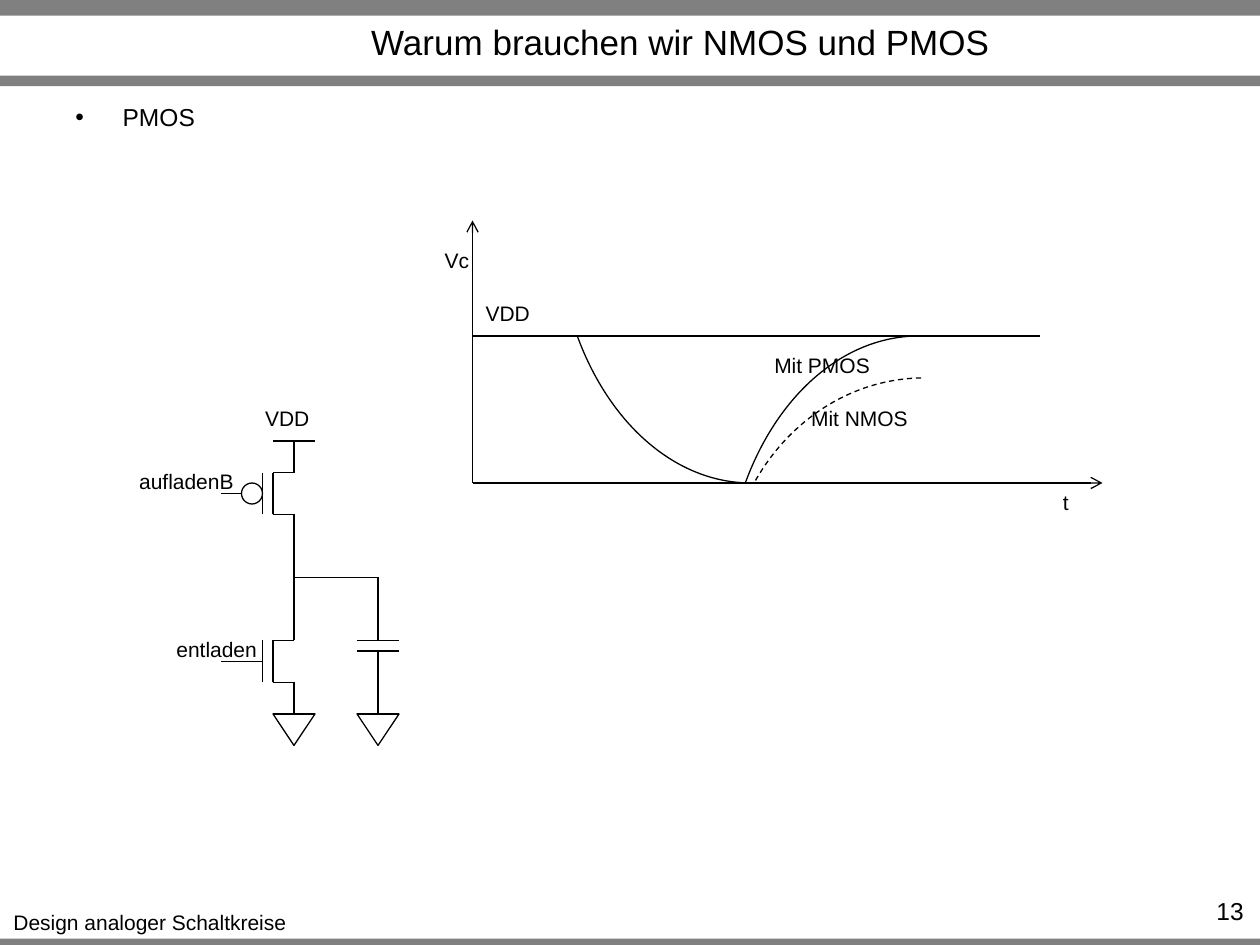
from lxml import etree
from pptx import Presentation
from pptx import util as u
from pptx.dml.color import RGBColor
from pptx.enum import dml, shapes, text
from pptx.oxml import ns

BLACK = RGBColor(0x00, 0x00, 0x00)
WHITE = RGBColor(0xFF, 0xFF, 0xFF)
GREY = RGBColor(0x80, 0x80, 0x80)
FONT = "Arial"
STROKE = 0.75
MIDDLE = text.PP_ALIGN.CENTER


def add_bar(slide, top, height):
    """Draw a grey band across the slide."""
    bar = slide.shapes.add_shape(
        shapes.MSO_SHAPE.RECTANGLE, 0, u.Pt(top), u.Pt(720), u.Pt(height))
    bar.shadow.inherit = False
    bar.fill.solid()
    bar.fill.fore_color.rgb = GREY
    bar.line.fill.background()


def add_text(slide, words, box, size=12, align=MIDDLE, wrap=False, bullet=False):
    """Write one paragraph into a text box."""
    frame = slide.shapes.add_textbox(*map(u.Pt, box)).text_frame
    frame.word_wrap = wrap
    paragraph = frame.paragraphs[0]
    if bullet:
        props = paragraph._p.get_or_add_pPr()
        props.set("marL", str(u.Pt(27)))
        props.set("indent", str(u.Pt(-27)))
        etree.SubElement(props, ns.qn("a:buFont")).set("typeface", FONT)
        etree.SubElement(props, ns.qn("a:buChar")).set("char", "•")
    paragraph.alignment = align
    run = paragraph.add_run()
    run.text = words
    run.font.size = u.Pt(size)
    run.font.name = FONT
    run.font.color.rgb = BLACK
    return frame


def add_line(parent, start, end, arrow=False):
    """Draw a thin straight line, optionally ending in an arrowhead."""
    line = parent.shapes.add_connector(
        shapes.MSO_CONNECTOR.STRAIGHT, *map(u.Pt, (*start, *end)))
    line.line.color.rgb = BLACK
    line.line.width = u.Pt(STROKE)
    if arrow:
        etree.SubElement(line.line._get_or_add_ln(), ns.qn("a:tailEnd")).set("type", "arrow")
    etree.SubElement(line._element.spPr, ns.qn("a:effectLst"))


def add_outline(slide, kind, box, flips=()):
    """Draw an unfilled preset outline, flipped where asked."""
    outline = slide.shapes.add_shape(kind, *map(u.Pt, box))
    outline.shadow.inherit = False
    outline.fill.background()
    outline.line.color.rgb = BLACK
    outline.line.width = u.Pt(STROKE)
    for flip in flips:
        outline._element.spPr.xfrm.set(flip, "1")
    return outline


def add_curve(slide, box, rotation, flips, dashed=False):
    """Draw a charging or discharging curve as an arc."""
    curve = add_outline(slide, shapes.MSO_SHAPE.ARC, box, flips)
    curve.rotation = rotation
    curve.adjustments[0] = 182.995
    curve.adjustments[1] = 0
    if dashed:
        curve.line.dash_style = dml.MSO_LINE.DASH


def add_transistor(slide, x, y):
    """Draw a transistor with its channel terminals at x and its gate at y."""
    transistor = slide.shapes.add_group_shape()
    channel, gate = x - 12, x - 18
    top, bottom = y - 12, y + 12
    for start, end in (
        ((x, bottom), (channel, bottom)),
        ((channel, bottom), (channel, top)),
        ((x, top), (channel, top)),
        ((gate, bottom), (gate, top)),
        ((x - 30, y), (gate, y)),
        ((x - 30, y), (x - 42, y)),
        ((x, top), (x, y - 30)),
        ((x, y + 30), (x, bottom)),
    ):
        add_line(transistor, start, end)


def add_circuit(slide):
    """Draw the inverter stage with its load capacitor."""
    stage, load = 168, 216
    pmos_gate, nmos_gate = 282, 378
    output, ground = 330, 408
    add_transistor(slide, stage, nmos_gate)
    add_transistor(slide, stage, pmos_gate)
    add_line(slide, (stage, 312), (stage, 348))
    add_line(slide, (stage, output), (load, output))
    add_line(slide, (load, output), (load, 366))
    add_line(slide, (load, 372), (load, ground))
    for x, y in ((stage, 252), (load, 366), (load, 372), (stage, ground), (load, ground)):
        add_line(slide, (x - 12, y), (x + 12, y))
    for x in (stage, load):
        add_outline(slide, shapes.MSO_SHAPE.ISOSCELES_TRIANGLE,
                    (x - 12, ground, 24, 18), ("flipV",))
    inversion = add_outline(slide, shapes.MSO_SHAPE.OVAL, (138, pmos_gate - 6, 12, 12))
    inversion.fill.solid()
    inversion.fill.fore_color.rgb = WHITE


def add_diagram(slide):
    """Draw the capacitor voltage over time."""
    origin, supply = (270, 276), 192
    add_line(slide, origin, (630, 276), arrow=True)
    add_line(slide, origin, (270, 126), arrow=True)
    add_line(slide, (270, supply), (594, supply))
    add_curve(slide, (276, 12, 306, 222), 270, ("flipH",))
    add_curve(slide, (372, 234, 306, 222), 90, ("flipH", "flipV"))
    add_curve(slide, (402, 228, 252, 228), 90, ("flipH", "flipV"), dashed=True)


def main():
    """Build and save the slide."""
    deck = Presentation()
    deck.slide_width, deck.slide_height = u.Pt(720), u.Pt(540)
    slide = deck.slides.add_slide(deck.slide_layouts[6])

    for top, height in ((536.4, 6), (0, 9), (43.2, 6)):
        add_bar(slide, top, height)
    title = add_text(slide, "Warum brauchen wir NMOS und PMOS",
                     (93.6, 10, 590.4, 27.4), size=20, wrap=True)
    title.vertical_anchor = text.MSO_ANCHOR.MIDDLE
    add_text(slide, "PMOS", (36, 54.7, 648, 35.3), size=14,
             align=text.PP_ALIGN.LEFT, wrap=True, bullet=True)
    add_text(slide, "13", (655.2, 508.3, 62.6, 17.3), size=14,
             align=text.PP_ALIGN.RIGHT, wrap=True)

    add_circuit(slide)
    add_diagram(slide)
    for words, left, top, width in (
        ("Design analoger Schaltkreise", 0, 516.2, 171.4),
        ("t", 600, 276, 18),
        ("Vc", 246.7, 138, 28.8),
        ("VDD", 270, 168, 40.3),
        ("VDD", 144, 228, 40.3),
        ("Mit PMOS", 434.9, 198, 69.8),
        ("Mit NMOS", 455.8, 228, 70.6),
        ("entladen", 93.6, 360, 60.5),
        ("aufladenB", 72, 264, 69.1),
    ):
        add_text(slide, words, (left, top, width, 21.6))

    deck.save("out.pptx")


if __name__ == "__main__":
    main()
